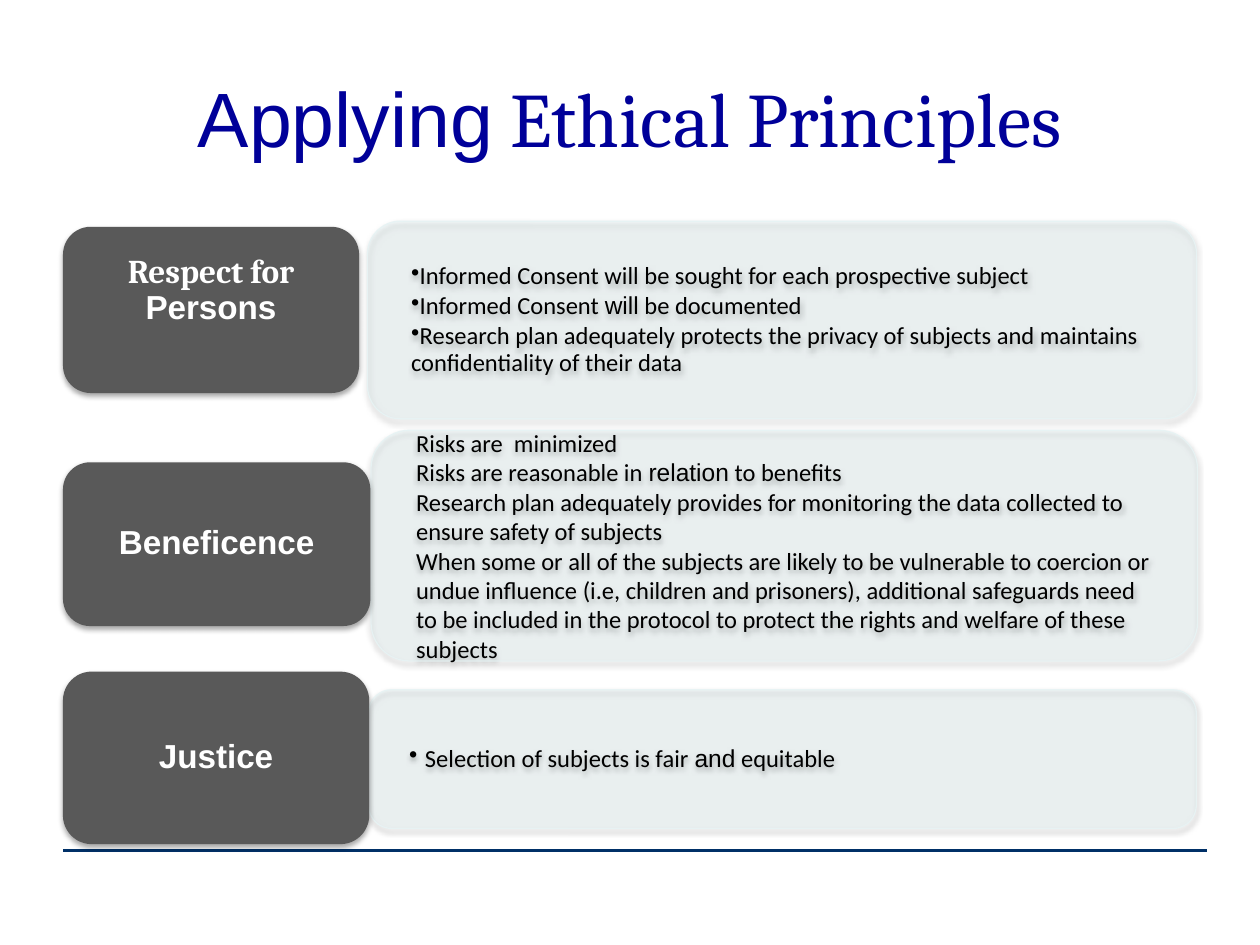
import pptx
import pptx.util
import pptx.dml.color
import pptx.enum.shapes
import pptx.enum.text
import pptx.oxml
import pptx.oxml.ns

Pt = pptx.util.Pt
RGBColor = pptx.dml.color.RGBColor
ROUNDED = pptx.enum.shapes.MSO_SHAPE.ROUNDED_RECTANGLE
STRAIGHT = pptx.enum.shapes.MSO_CONNECTOR.STRAIGHT
ALIGN = pptx.enum.text.PP_ALIGN
MIDDLE = pptx.enum.text.MSO_ANCHOR.MIDDLE
qn = pptx.oxml.ns.qn

NAVY = RGBColor(0x00, 0x30, 0x67)
BLUE = RGBColor(0x00, 0x00, 0x99)
GRAY = RGBColor(0x59, 0x59, 0x59)
AQUA = RGBColor(0xBB, 0xE0, 0xE3)
PALE = RGBColor(0xE7, 0xF3, 0xF4)
WHITE = RGBColor(0xFF, 0xFF, 0xFF)
BLACK = RGBColor(0x00, 0x00, 0x00)

SHADOW = (
    f'<a:effectLst {pptx.oxml.ns.nsdecls("a")}>'
    f'<a:outerShdw blurRad="{Pt(3.1)}" dist="{Pt(1.8)}" dir="5400000" rotWithShape="0">'
    '<a:srgbClr val="000000"><a:alpha val="35000"/></a:srgbClr>'
    '</a:outerShdw></a:effectLst>'
)


def fill_text(para, spans, size, color, bold=False):
    """Add (text, font name) spans to a paragraph."""
    for text, name in spans:
        span = para.add_run()
        span.text = text
        for key, value in {"name": name, "size": Pt(size), "bold": bold}.items():
            setattr(span.font, key, value)
        span.font.color.rgb = color


def add_card(page, place, color, insets):
    """Add a rounded, softly shadowed box and return it."""
    box = page.shapes.add_shape(ROUNDED, *[Pt(length) for length in place])
    box.fill.solid()
    box.fill.fore_color.rgb = color
    box.line.fill.background()
    box._element.spPr.append(pptx.oxml.parse_xml(SHADOW))
    left, top, right, bottom = [Pt(length) for length in insets]
    frame_format = {"margin_left": left, "margin_top": top, "margin_right": right,
                    "margin_bottom": bottom, "vertical_anchor": MIDDLE, "word_wrap": True}
    for key, value in frame_format.items():
        setattr(box.text_frame, key, value)
    return box


deck = pptx.Presentation()
deck.slide_width, deck.slide_height = Pt(720), Pt(540)
page = deck.slides.add_slide(deck.slide_layouts[5])

# Rule at the foot
rule = page.shapes.add_connector(STRAIGHT, Pt(36), Pt(486), Pt(689.8), Pt(486))
rule.line.color.rgb = NAVY
rule.line.width = Pt(2.25)
rule._element.spPr.append(pptx.oxml.parse_xml(f'<a:effectLst {pptx.oxml.ns.nsdecls("a")}/>'))

# Title
title = page.shapes.title
for key, value in {"left": 36, "top": 21.6, "width": 648, "height": 90}.items():
    setattr(title, key, Pt(value))
title.text_frame.vertical_anchor = MIDDLE
title_para = title.text_frame.paragraphs[0]
title_para.alignment = ALIGN.CENTER
fill_text(title_para, [("Applying", "Arial"), (" Ethical Principles", "Cambria")], 44, BLUE)

# Principles: label and panel of each row
ROWS = [
    {
        "label": [("Respect for ", "Cambria"), ("Persons", "Arial")],
        "label_place": (36, 129.6, 169.2, 95), "label_bottom": 25,
        "panel_place": (210, 126.4, 473.8, 113),
        "bullet": True, "hang": 0, "line": 0.9, "after": 2,
        "points": [
            [("Informed Consent will be sought for each prospective subject", "Calibri")],
            [("Informed Consent ", "Calibri"), ("will", "Arial"), (" be documented", "Calibri")],
            [("Research plan adequately protects the privacy of subjects and maintains "
              "confidentiality of their data", "Calibri")],
        ],
    },
    {
        "label": [("Beneficence", "Arial")],
        "label_place": (36, 264.2, 175.7, 93.6), "label_bottom": 3,
        "panel_place": (212, 245.9, 472.3, 131.8),
        "bullet": False, "hang": 0, "line": 1.0, "after": 0,
        "points": [
            [("Risks are  minimized", "Calibri")],
            [("Risks are reasonable in ", "Calibri"), ("relation", "Arial"),
             (" to benefits", "Calibri")],
            [("Research plan adequately provides for monitoring the data collected to "
              "ensure safety of subjects", "Calibri")],
            [("When some or all of the subjects are likely to be vulnerable to coercion or "
              "undue influence (i.e, children and prisoners), additional safeguards need to be "
              "included in the protocol to protect the rights and welfare of these subjects",
              "Calibri")],
        ],
    },
    {
        "label": [("Justice", "Arial")],
        "label_place": (36, 383.8, 175, 98.6), "label_bottom": 3,
        "panel_place": (210.6, 394.2, 473, 79.2),
        "bullet": True, "hang": 9, "line": 0.9, "after": 2,
        "points": [
            [("Selection of subjects is fair ", "Calibri"), ("and", "Arial"),
             (" equitable", "Calibri")],
        ],
    },
]

for row in ROWS:
    # Translucent panel with its points
    panel = add_card(page, row["panel_place"], AQUA, (19.4, 10, 19.4, 10))
    panel.line.color.rgb = PALE
    panel.line.width = Pt(0.75)
    for part, alpha in ((panel.fill, 15), (panel.line.fill, 90)):
        color = part._xPr.find(qn("a:solidFill"))[0]
        color.append(pptx.oxml.parse_xml(
            f'<a:alpha {pptx.oxml.ns.nsdecls("a")} val="{alpha * 1000}"/>'))
    for number, spans in enumerate(row["points"]):
        frame = panel.text_frame
        para = frame.add_paragraph() if number else frame.paragraphs[0]
        if row["bullet"]:
            properties = para._p.get_or_add_pPr()
            properties.set("marL", str(Pt(row["hang"])))
            properties.set("indent", str(-Pt(row["hang"])))
            properties.append(pptx.oxml.parse_xml(
                f'<a:buChar {pptx.oxml.ns.nsdecls("a")} char="•"/>'))
        para_format = {"alignment": ALIGN.LEFT, "line_spacing": row["line"],
                       "space_after": Pt(row["after"])}
        for key, value in para_format.items():
            setattr(para, key, value)
        fill_text(para, spans, 14, BLACK)

    # Dark label
    label = add_card(page, row["label_place"], GRAY, (6, 3, 6, row["label_bottom"]))
    para = label.text_frame.paragraphs[0]
    for key, value in {"alignment": ALIGN.CENTER, "line_spacing": 0.9}.items():
        setattr(para, key, value)
    fill_text(para, row["label"], 19, WHITE, bold=True)

deck.save("out.pptx")
